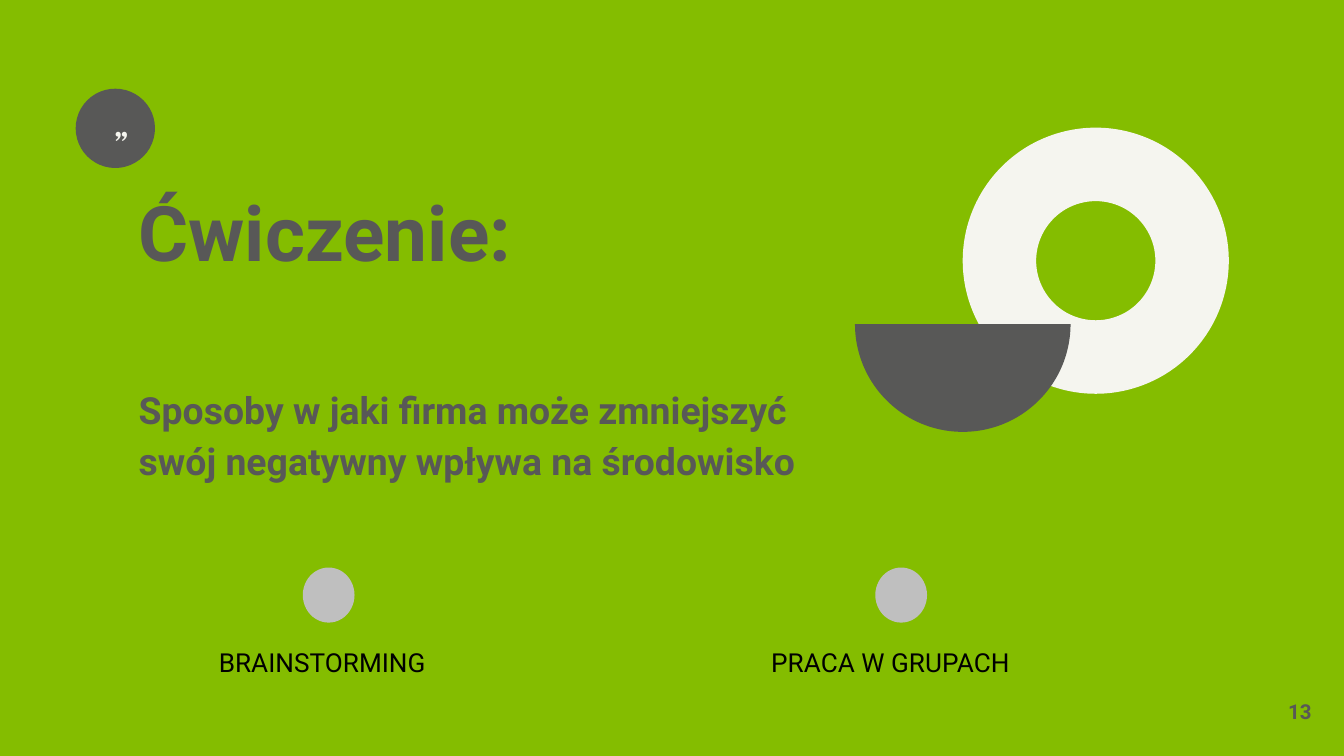
from pptx import Presentation
from pptx import util as u
from pptx.dml.color import RGBColor
from pptx.enum import shapes, text

GREEN = RGBColor(0x84, 0xBD, 0x00)
GRAPHITE = RGBColor(0x58, 0x58, 0x57)
IVORY = RGBColor(0xF5, 0xF5, 0xEF)
SILVER = RGBColor(0xBF, 0xBF, 0xBF)
BLACK = RGBColor(0x00, 0x00, 0x00)

COLUMNS, ROWS = 100, 56.25
TITLE_ONLY = 5
ALIGN = text.PP_ALIGN
ANCHOR = text.MSO_ANCHOR


def write(paragraph, content, size, color=GRAPHITE, bold=True, font="Roboto",
          align=ALIGN.LEFT, spacing=None, before=0):
    paragraph.alignment = align
    paragraph.line_spacing = spacing
    paragraph.space_before = u.Pt(before)
    run = paragraph.add_run()
    run.text = content
    run.font.name = font
    run.font.size = u.Pt(size)
    run.font.bold = bold
    run.font.color.rgb = color


class SlideBuilder:
    def __init__(self, presentation, background):
        self.cell_width = presentation.slide_width / COLUMNS
        self.cell_height = presentation.slide_height / ROWS
        self.slide = presentation.slides.add_slide(
            presentation.slide_layouts[TITLE_ONLY])
        self.slide.background.fill.solid()
        self.slide.background.fill.fore_color.rgb = background

    def box(self, column, row, width, height):
        return (round(column * self.cell_width), round(row * self.cell_height),
                round(width * self.cell_width), round(height * self.cell_height))

    def frame(self, shape, anchor, insets, wrap):
        frame = shape.text_frame
        frame.auto_size = text.MSO_AUTO_SIZE.NONE
        frame.word_wrap = wrap
        frame.vertical_anchor = anchor
        (frame.margin_left, frame.margin_top,
         frame.margin_right, frame.margin_bottom) = map(u.Inches, insets)
        return frame

    def title(self, place, heading, statement):
        title = self.slide.shapes.title
        title.left, title.top, title.width, title.height = self.box(*place)
        frame = self.frame(title, ANCHOR.BOTTOM, (0, 0, 0, 0), True)
        write(frame.paragraphs[0], heading, 41, spacing=1.15)
        write(frame.add_paragraph(), statement, 20, spacing=1.15, before=55.5)

    def label(self, place, content, size, anchor=ANCHOR.TOP,
              insets=(0.1, 0.05, 0.1, 0.05), **style):
        shape = self.slide.shapes.add_textbox(*self.box(*place))
        frame = self.frame(shape, anchor, insets, False)
        write(frame.paragraphs[0], content, size, **style)

    def figure(self, kind, place, color, adjustments=()):
        shape = self.slide.shapes.add_shape(kind, *self.box(*place))
        shape.shadow.inherit = False
        shape.fill.solid()
        shape.fill.fore_color.rgb = color
        shape.line.fill.background()
        for index, value in enumerate(adjustments):
            shape.adjustments[index] = value


def main():
    presentation = Presentation()
    presentation.slide_width = u.Inches(10)
    presentation.slide_height = presentation.slide_width * 9 // 16
    builder = SlideBuilder(presentation, GREEN)
    kinds = shapes.MSO_SHAPE

    builder.figure(kinds.OVAL, (5.63, 6.6, 5.9, 5.9), GRAPHITE)
    builder.figure(kinds.DONUT, (71.63, 9.5, 19.8, 19.8), IVORY, (0.276,))
    builder.figure(kinds.CHORD, (63.62, 16.1, 16.04, 16.04), GRAPHITE, (0, 108))
    builder.label((7.6, 8.8, 1.9, 1.5), "”", 14, color=IVORY,
                  font="TeX Gyre Schola", align=ALIGN.CENTER,
                  insets=(0.1, 0.05, 0, 0))

    builder.title((10.32, 10.25, 52.3, 25.7), "Ćwiczenie:",
                  "Sposoby w jaki firma może zmniejszyć "
                  "swój negatywny wpływa na środowisko")
    builder.label((91.6, 51.95, 6, 2), "13", 11, anchor=ANCHOR.MIDDLE,
                  insets=(0, 0, 0, 0), align=ALIGN.RIGHT)

    methods = [("BRAINSTORMING", 22.53, 15.3, 18.4),
               ("PRACA W GRUPACH", 65.13, 56.4, 21.3)]
    for name, dot_column, name_column, width in methods:
        builder.figure(kinds.OVAL, (dot_column, 42.23, 3.85, 4.1), SILVER)
        builder.label((name_column, 47.6, width, 3.3), name, 14,
                      color=BLACK, bold=False)

    presentation.save("out.pptx")


if __name__ == "__main__":
    main()
